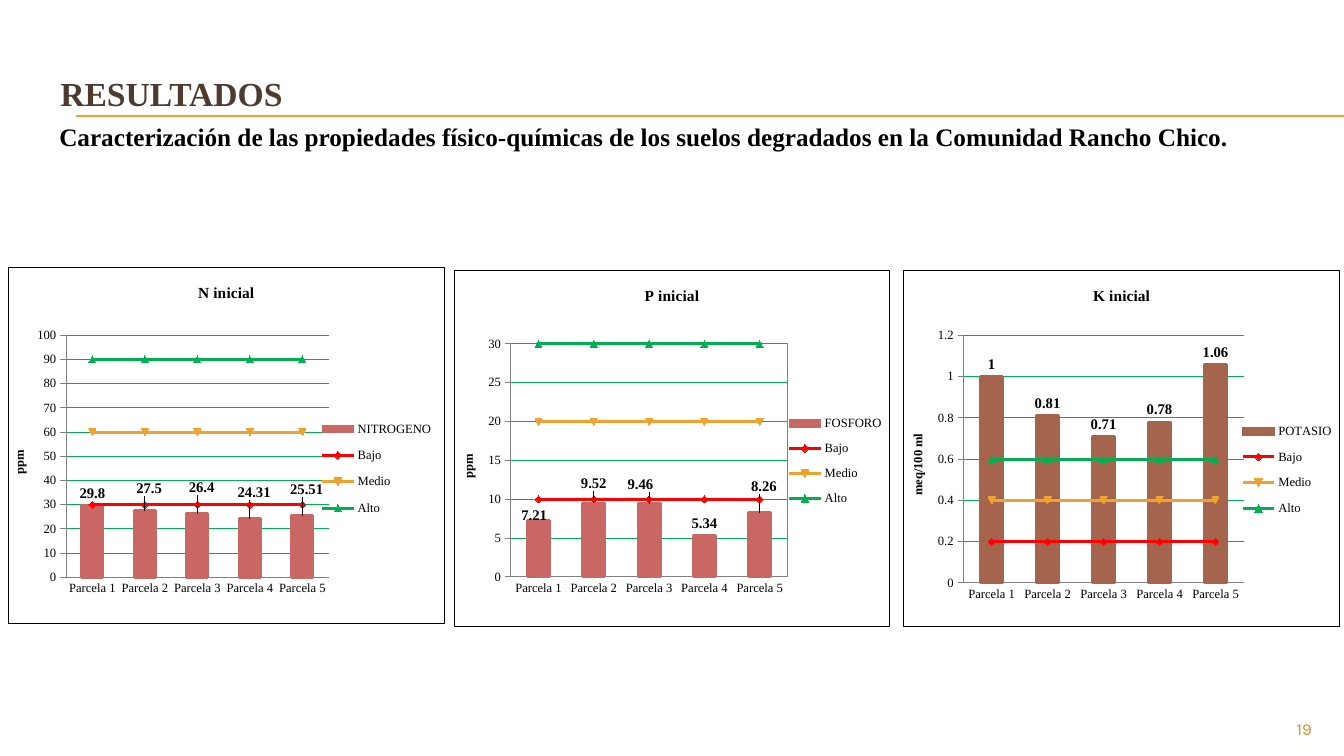
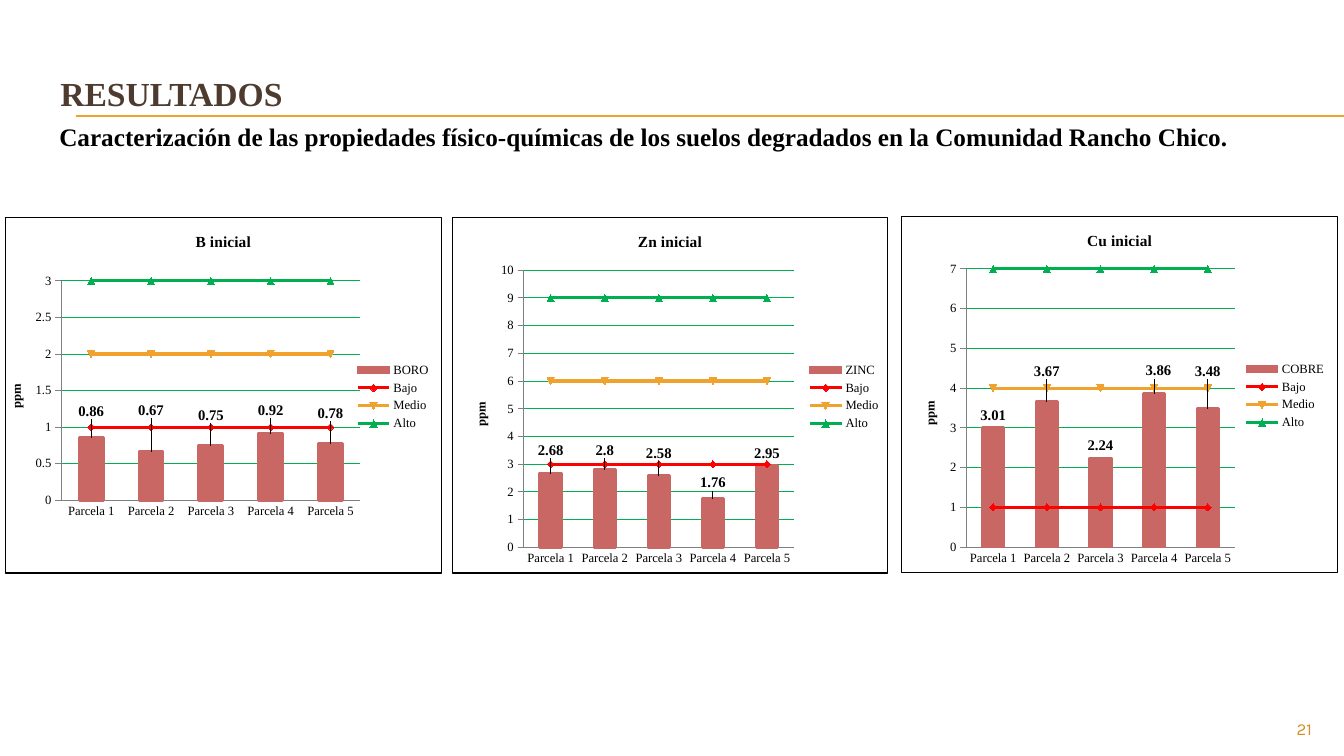
import dataclasses

import pptx
import pptx.chart.data
import pptx.dml.color
import pptx.enum.chart
import pptx.enum.shapes
import pptx.enum.text
import pptx.oxml
import pptx.oxml.ns
import pptx.util

Inches = pptx.util.Inches
Pt = pptx.util.Pt
RGBColor = pptx.dml.color.RGBColor
XL = pptx.enum.chart
PP_ALIGN = pptx.enum.text.PP_ALIGN
MSO_ANCHOR = pptx.enum.text.MSO_ANCHOR

BLACK = RGBColor(0x00, 0x00, 0x00)
GRAY = RGBColor(0x80, 0x80, 0x80)
BROWN = RGBColor(0x4E, 0x3B, 0x30)
OCHRE = RGBColor(0xD4, 0x8F, 0x29)
ORANGE = RGBColor(0xF0, 0xA2, 0x2E)
RED = RGBColor(0xFF, 0x00, 0x00)
GREEN = RGBColor(0x00, 0xB0, 0x50)
ROSE = RGBColor(0xC9, 0x67, 0x65)
SIENNA = RGBColor(0xA5, 0x64, 0x4E)

SERIF = "Times New Roman"
NUMBER_FONT = "Karla"
TITLE = "RESULTADOS"
SUBTITLE = ("Caracterización de las propiedades físico-químicas de los suelos "
            "degradados en la Comunidad Rancho Chico.")
PLOTS = [f"Parcela {n}" for n in range(1, 6)]
LEVELS = [("Bajo", RED), ("Medio", ORANGE), ("Alto", GREEN)]
CHART_W, CHART_H = 4.33, 3.54
NS = pptx.oxml.ns.nsdecls("c", "a")


@dataclasses.dataclass
class Nutrient:
    """One soil nutrient: measured values, reference levels and chart layout.

    area and legend are (x, y, w, h) fractions of the chart; shifts maps a
    point to the offset of its label, in the same fractions.
    """
    title: str
    name: str
    left: float
    top: float
    values: list
    levels: list
    axis_max: float
    axis_step: float
    area: tuple
    legend: tuple
    shifts: dict = dataclasses.field(default_factory=dict)
    unit: str = "ppm"
    color: RGBColor = ROSE
    framed: bool = False


MACRO = [
    Nutrient("N inicial", "NITROGENO", 0.08, 2.65,
             [29.8, 27.5, 26.4, 24.31, 25.51], [30, 60, 90], 100, 10,
             (0.132, 0.19, 0.603, 0.681), (0.71, 0.4, 0.27, 0.33),
             {1: (0.01, -0.03), 2: (0.01, -0.04), 3: (0.01, -0.04),
              4: (0.01, -0.04)}),
    Nutrient("P inicial", "FOSFORO", 4.5, 2.68,
             [7.21, 9.52, 9.46, 5.34, 8.26], [10, 20, 30], 30, 5,
             (0.13, 0.206, 0.635, 0.655), (0.76, 0.38, 0.23, 0.31),
             {0: (-0.01, 0.02), 1: (0, -0.02), 2: (-0.02, -0.02),
              4: (0.01, -0.04)}, framed=True),
    Nutrient("K inicial", "POTASIO", 8.96, 2.68,
             [1, 0.81, 0.71, 0.78, 1.06], [0.2, 0.4, 0.6], 1.2, 0.2,
             (0.137, 0.182, 0.643, 0.696), (0.77, 0.4, 0.22, 0.32),
             unit="meq/100 ml", color=SIENNA),
]
MICRO = [
    Nutrient("B inicial", "BORO", 0.05, 2.15,
             [0.86, 0.67, 0.75, 0.92, 0.78], [1, 2, 3], 3, 0.5,
             (0.128, 0.179, 0.687, 0.617), (0.8, 0.4, 0.18, 0.21),
             {0: (0, -0.04), 1: (0, -0.08), 2: (0, -0.05), 3: (0, -0.03),
              4: (0, -0.05)}),
    Nutrient("Zn inicial", "ZINC", 4.48, 2.15,
             [2.68, 2.8, 2.58, 1.76, 2.95], [3, 6, 9], 10, 1,
             (0.164, 0.149, 0.621, 0.779), (0.81, 0.4, 0.18, 0.21),
             {0: (0, -0.03), 1: (0, -0.02), 2: (0, -0.03), 3: (0, -0.01)}),
    Nutrient("Cu inicial", "COBRE", 8.94, 2.14,
             [3.01, 3.67, 2.24, 3.86, 3.48], [1, 4, 7], 7, 1,
             (0.148, 0.148, 0.616, 0.782), (0.78, 0.4, 0.2, 0.21),
             {1: (0, -0.05), 3: (0.01, -0.03), 4: (0, -0.07)}),
]


def set_font(font, size, color=BLACK, bold=False, name=SERIF):
    font.name = name
    font.size = Pt(size)
    font.bold = bold
    font.color.rgb = color


def add_text(s, box, text, size, color=BLACK, bold=True, name=SERIF,
             align=PP_ALIGN.LEFT, anchor=MSO_ANCHOR.TOP):
    tf = s.shapes.add_textbox(*map(Inches, box)).text_frame
    tf.word_wrap = True
    tf.vertical_anchor = anchor
    p = tf.paragraphs[0]
    p.alignment = align
    r = p.add_run()
    r.text = text
    set_font(r.font, size, color, bold, name)


def add_rule(s, y):
    line = s.shapes.add_connector(
        pptx.enum.shapes.MSO_CONNECTOR.STRAIGHT,
        Inches(0.75), Inches(y), Inches(13.33), Inches(y))
    line.line.color.rgb = ORANGE
    line.line.width = Pt(0.75)
    line._element.spPr.append(
        pptx.oxml.parse_xml(f"<a:effectLst {NS}/>"))


def layout_xml(x, y, w=None, h=None, inner=False, edge=True):
    """Manual chart layout; without edge, x and y are offsets."""
    parts = ['<c:layoutTarget val="inner"/>'] if inner else []
    if edge:
        parts.append('<c:xMode val="edge"/><c:yMode val="edge"/>')
    for tag, value in (("x", x), ("y", y), ("w", w), ("h", h)):
        if value is not None:
            parts.append(f'<c:{tag} val="{value}"/>')
    return pptx.oxml.parse_xml(
        f"<c:layout {NS}><c:manualLayout>{''.join(parts)}"
        "</c:manualLayout></c:layout>")


def box_xml(fill, line):
    return pptx.oxml.parse_xml(
        f'<c:spPr {NS}>{fill}<a:ln w="9525"><a:solidFill>'
        f'<a:srgbClr val="{line}"/></a:solidFill></a:ln></c:spPr>')


def move_levels_to_lines(chart):
    """Turn every series but the first into a line on the same axes."""
    bars = chart._chartSpace.xpath(".//c:barChart")[0]
    axes = "".join(f'<c:axId val="{axis.get("val")}"/>'
                   for axis in bars.xpath("c:axId"))
    lines = pptx.oxml.parse_xml(
        f'<c:lineChart {NS}><c:grouping val="standard"/>'
        f'<c:varyColors val="0"/><c:marker val="1"/>{axes}</c:lineChart>')
    marker = lines.xpath("c:marker")[0]
    for ser in bars.xpath("c:ser")[1:]:
        for flag in ser.xpath("c:invertIfNegative"):
            ser.remove(flag)
        marker.addprevious(ser)
    bars.addnext(lines)


def style_bars(plot, nutrient):
    plot.gap_width = 150
    plot.vary_by_categories = False
    series = plot.series[0]
    series.invert_if_negative = False
    series.format.fill.solid()
    series.format.fill.fore_color.rgb = nutrient.color
    series.format.line.color.rgb = nutrient.color
    series.format.line.width = Pt(2)
    series._element.xpath("c:spPr/a:ln")[0].append(
        pptx.oxml.parse_xml(f"<a:round {NS}/>"))
    labels = series.data_labels
    labels.show_value = True
    labels.position = XL.XL_LABEL_POSITION.OUTSIDE_END
    set_font(labels.font, 10.5, bold=True)
    for i, (dx, dy) in nutrient.shifts.items():
        label = series.points[i].data_label
        label.position = XL.XL_LABEL_POSITION.OUTSIDE_END
        set_font(label.font, 10.5, bold=True)
        idx = series._element.xpath(f'.//c:dLbl/c:idx[@val="{i}"]')[0]
        idx.addnext(layout_xml(dx, dy, edge=False))


def style_lines(plot):
    for series, (_, color) in zip(plot.series, LEVELS):
        series.smooth = False
        series.format.line.color.rgb = color
        series.format.line.width = Pt(2.25)
        marker = series.marker
        marker.style = XL.XL_MARKER_STYLE.AUTOMATIC
        marker.size = 5
        marker.format.fill.solid()
        marker.format.fill.fore_color.rgb = color
        marker.format.line.color.rgb = color


def style_axes(chart, nutrient):
    cat, val = chart.category_axis, chart.value_axis
    cat.major_tick_mark = XL.XL_TICK_MARK.NONE
    val.major_tick_mark = XL.XL_TICK_MARK.OUTSIDE
    for axis in (cat, val):
        axis.minor_tick_mark = XL.XL_TICK_MARK.NONE
        axis.format.line.color.rgb = GRAY
        axis.format.line.width = Pt(0.75)
        set_font(axis.tick_labels.font, 9)
    val.minimum_scale = 0
    val.maximum_scale = nutrient.axis_max
    val.major_unit = nutrient.axis_step
    val.has_major_gridlines = True
    val.major_gridlines.format.line.color.rgb = GREEN
    val.major_gridlines.format.line.width = Pt(0.75)
    set_title(val.axis_title, nutrient.unit, 9)


def set_title(title, text, size):
    r = title.text_frame.paragraphs[0].add_run()
    r.text = text
    set_font(r.font, size, bold=True)


def place_parts(chart, nutrient):
    """Fix the plot area and legend, and draw the frames."""
    area = chart._chartSpace.xpath(".//c:plotArea")[0]
    for old in area.xpath("c:layout"):
        area.remove(old)
    area.insert(0, layout_xml(*nutrient.area, inner=True))
    if nutrient.framed:
        area.append(box_xml("<a:noFill/>", GRAY))
    chart.has_legend = True
    legend = chart.legend
    legend.position = XL.XL_LEGEND_POSITION.RIGHT
    legend.include_in_layout = False
    set_font(legend.font, 9)
    for old in legend._element.xpath("c:layout"):
        legend._element.remove(old)
    legend._element.xpath("c:legendPos")[0].addnext(
        layout_xml(*nutrient.legend))
    white = '<a:solidFill><a:srgbClr val="FFFFFF"/></a:solidFill>'
    chart._chartSpace.xpath("c:chart")[0].addnext(box_xml(white, BLACK))


def add_nutrient_chart(s, nutrient):
    data = pptx.chart.data.CategoryChartData()
    data.categories = PLOTS
    data.add_series(nutrient.name, nutrient.values)
    for (name, _), level in zip(LEVELS, nutrient.levels):
        data.add_series(name, [level] * len(PLOTS))
    chart = s.shapes.add_chart(
        XL.XL_CHART_TYPE.COLUMN_CLUSTERED, Inches(nutrient.left),
        Inches(nutrient.top), Inches(CHART_W), Inches(CHART_H), data).chart
    set_font(chart.font, 9)
    chart.has_title = True
    set_title(chart.chart_title, nutrient.title, 11)
    move_levels_to_lines(chart)
    bars, lines = chart.plots
    style_bars(bars, nutrient)
    style_lines(lines)
    style_axes(chart, nutrient)
    place_parts(chart, nutrient)


def add_results_slide(prs, number, nutrients):
    s = prs.slides.add_slide(prs.slide_layouts[6])
    for y in (1.15, 1.16):
        add_rule(s, y)
    add_text(s, (0.5, 0.46, 4.97, 0.92), TITLE, 24, BROWN,
             anchor=MSO_ANCHOR.MIDDLE)
    add_text(s, (12, 7.08, 1.11, 0.27), number, 12, OCHRE, bold=False,
             name=NUMBER_FONT, align=PP_ALIGN.RIGHT)
    add_text(s, (0.49, 1.15, 11.84, 0.71), SUBTITLE, 18)
    for nutrient in nutrients:
        add_nutrient_chart(s, nutrient)


def main():
    prs = pptx.Presentation()
    prs.slide_width = Inches(13.33)
    prs.slide_height = Inches(7.5)
    add_results_slide(prs, "19", MACRO)
    add_results_slide(prs, "21", MICRO)
    prs.save("out.pptx")


if __name__ == "__main__":
    main()
